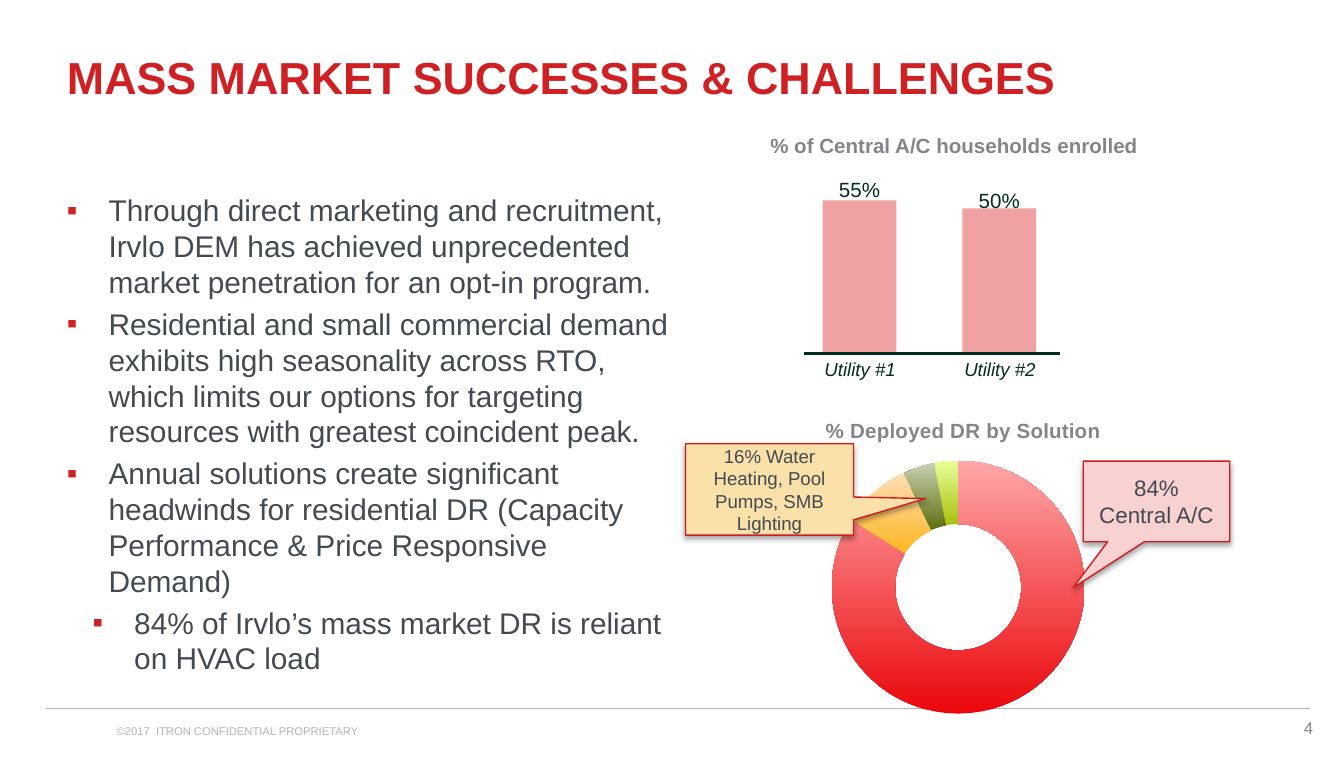
from lxml.etree import SubElement, Element
from pptx import Presentation
from pptx.chart.data import CategoryChartData
from pptx.dml.color import RGBColor
from pptx.enum.chart import XL_CHART_TYPE
from pptx.enum.shapes import MSO_CONNECTOR, MSO_SHAPE
from pptx.enum.text import MSO_ANCHOR, PP_ALIGN
from pptx.oxml.ns import qn
from pptx.util import Inches, Pt

RED, SLATE, GREY, GREEN = "CF2124", "434A52", "84848D", "002E1A"
LEFT, MID, RIGHT = PP_ALIGN.LEFT, PP_ALIGN.CENTER, PP_ALIGN.RIGHT


def color(code):
    return RGBColor.from_string(code)


def place(node, index, **spots):
    """Give a chart part a fixed place, in shares of the chart."""
    for old in node.findall(qn("c:layout")):
        node.remove(old)
    layout = Element(qn("c:layout"))
    node.insert(index, layout)
    manual = SubElement(layout, qn("c:manualLayout"))
    if "w" in spots:
        SubElement(manual, qn("c:layoutTarget"), val="inner")
    for key in "xy":
        SubElement(manual, qn(f"c:{key}Mode"), val="edge")
    for key, share in spots.items():
        SubElement(manual, qn(f"c:{key}"), val=str(share))


class Deck:
    font = "Arial"

    def __init__(self, wide, high):
        self.prs = Presentation()
        self.prs.slide_width, self.prs.slide_height = Inches(wide), Inches(high)
        self.slide = self.prs.slides.add_slide(self.prs.slide_layouts[6])
        self.shapes = self.slide.shapes

    def run(self, para, text, size, code, bold=False, italic=False):
        run = para.add_run()
        run.text = text
        font = run.font
        font.name, font.size = self.font, Pt(size)
        font.bold, font.italic = bold, italic
        font.color.rgb = color(code)

    def text(self, box, text, size, code, align=LEFT,
             anchor=MSO_ANCHOR.TOP, **look):
        frame = self.shapes.add_textbox(*map(Inches, box)).text_frame
        frame.word_wrap = True
        frame.vertical_anchor = anchor
        para = frame.paragraphs[0]
        para.alignment = align
        self.run(para, text, size, code, **look)

    def list(self, box, items, size, code):
        frame = self.shapes.add_textbox(*map(Inches, box)).text_frame
        frame.word_wrap = True
        for i, (level, text) in enumerate(items):
            para = frame.add_paragraph() if i else frame.paragraphs[0]
            props = para._p.get_or_add_pPr()
            props.set("marL", str(Inches((0.31, 0.5)[level])))
            props.set("indent", str(Inches(-0.31)))
            tint = SubElement(props, qn("a:buClr"))
            SubElement(tint, qn("a:srgbClr"), val=RED)
            SubElement(props, qn("a:buFont"), typeface=self.font)
            SubElement(props, qn("a:buChar"), char="▪")
            para.level = level
            if i:
                para.space_before = Pt(0.2 * size)
            self.run(para, text, size, code)

    def line(self, x1, y1, x2, y2, code, width):
        line = self.shapes.add_connector(
            MSO_CONNECTOR.STRAIGHT, *map(Inches, (x1, y1, x2, y2)))
        line.line.color.rgb = color(code)
        line.line.width = Pt(width)
        SubElement(line._element.spPr, qn("a:effectLst"))

    def bar(self, box, fill):
        bar = self.shapes.add_shape(MSO_SHAPE.RECTANGLE, *map(Inches, box))
        bar.shadow.inherit = False
        bar.fill.solid()
        bar.fill.fore_color.rgb = color(fill)
        bar.line.fill.background()

    def callout(self, box, tip, fill, text, size):
        note = self.shapes.add_shape(
            MSO_SHAPE.RECTANGULAR_CALLOUT, *map(Inches, box))
        note.adjustments[0], note.adjustments[1] = tip
        note.fill.solid()
        note.fill.fore_color.rgb = color(fill)
        note.line.color.rgb = color("D01C1F")
        note.line.width = Pt(0.75)
        # Soft shadow below
        note.shadow.inherit = False
        effects = note._element.spPr.find(qn("a:effectLst"))
        shade = SubElement(effects, qn("a:outerShdw"), blurRad=str(Pt(3.1)),
                           dist=str(Pt(1.8)), dir="5400000", rotWithShape="0")
        black = SubElement(shade, qn("a:srgbClr"), val="000000")
        SubElement(black, qn("a:alpha"), val="35000")
        frame = note.text_frame
        frame.word_wrap = True
        frame.vertical_anchor = MSO_ANCHOR.MIDDLE
        para = frame.paragraphs[0]
        para.alignment = MID
        self.run(para, text, size, SLATE)

    def ring(self, box, title, values, tints):
        data = CategoryChartData()
        data.categories = [str(i + 1) for i in range(len(values))]
        data.add_series("Series 1", values)
        chart = self.shapes.add_chart(
            XL_CHART_TYPE.DOUGHNUT, *map(Inches, box), data).chart
        chart.font.name, chart.font.size = self.font, Pt(10)
        chart.font.color.rgb = color("141619")
        chart.has_legend = False
        chart.has_title = True
        head = chart.chart_title
        self.run(head.text_frame.paragraphs[0], title, 11, GREY, bold=True)
        place(head._element, 1, x=0.21, y=0.06)
        plot = chart._chartSpace.chart.plotArea
        place(plot, 0, x=0.23, y=0.2, w=0.54, h=0.74)
        points = chart.plots[0].series[0].points
        for i, pair in enumerate(tints):
            fill = points[i].format.fill
            fill.gradient()
            fill.gradient_angle = 90
            for stop, code in zip(fill.gradient_stops, pair):
                stop.color.rgb = color(code)


def main():
    deck = Deck(10, 5.63)

    # Footer
    deck.line(0.34, 5.27, 9.75, 5.27, "BAB3BC", 0.5)
    deck.text((9.47, 5.26, 0.4, 0.3), "4", 9, GREY, RIGHT, MSO_ANCHOR.MIDDLE)
    deck.text((0.77, 5.34, 2.97, 0.2),
              "©2017  ITRON CONFIDENTIAL PROPRIETARY", 6, "B5B5BB")

    # Title and points
    deck.text((0.4, 0.32, 9, 0.5), "MASS MARKET SUCCESSES & CHALLENGES",
              24, RED, anchor=MSO_ANCHOR.MIDDLE, bold=True)
    deck.list((0.4, 1.38, 4.71, 2.87), [
        (0, "Through direct marketing and recruitment, Irvlo DEM has achieved "
            "unprecedented market penetration for an opt-in program."),
        (0, "Residential and small commercial demand exhibits high "
            "seasonality across RTO, which limits our options for targeting "
            "resources with greatest coincident peak."),
        (0, "Annual solutions create significant headwinds for residential "
            "DR (Capacity Performance & Price Responsive Demand)"),
        (1, "84% of Irvlo’s mass market DR is reliant on HVAC load"),
    ], 16, SLATE)

    # Enrolment bars
    base = 2.62
    bars = [("Utility #1", "55%", 1.13, 1.27), ("Utility #2", "50%", 1.07, 1.35)]
    for i, (name, share, high, top) in enumerate(bars):
        left = 6.12 + 1.04 * i
        deck.bar((left, base - high, 0.55, high), "F0A2A3")
        deck.text((left - 0.27, 2.61, 1.1, 0.24), name, 10, GREEN, MID,
                  italic=True)
        deck.text((left - 0.07, top, 0.69, 0.14), share, 11, GREEN, MID)
    deck.line(5.98, 2.63, 7.89, 2.63, GREEN, 1.5)
    deck.text((5.6, 0.94, 3, 0.29), "% of Central A/C households enrolled",
              11, GREY, MID, bold=True)

    # Solution ring with callouts
    deck.ring((5.38, 2.92, 3.5, 2.54), "% Deployed DR by Solution",
              (84, 9, 4, 3),
              [("EA070B", "FFA7A8"), ("FFB71D", "FFDEB8"),
               ("5D6F0D", "C8D1B2"), ("A8C00C", "E9FE99")])
    deck.callout((8.06, 3.43, 1.09, 0.6), (-0.57, 1.07), "F8D1D1",
                 "84% Central A/C", 12)
    deck.callout((5.1, 3.3, 1.25, 0.68), (0.93, 0.1), "FAE1A9",
                 "16% Water Heating, Pool Pumps, SMB Lighting", 10)

    deck.prs.save("out.pptx")


if __name__ == "__main__":
    main()
